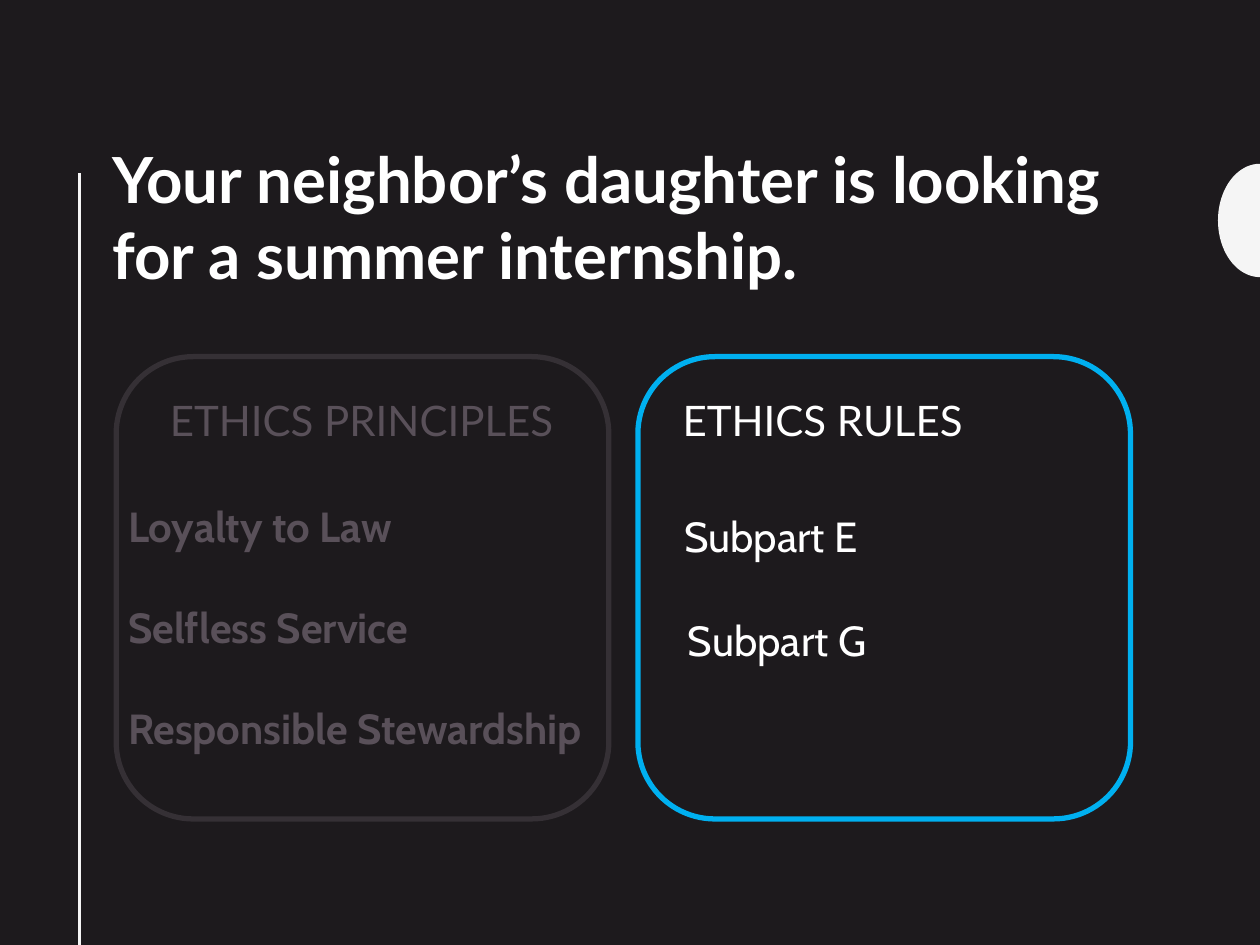
from math import cos, pi, sin

from lxml import etree
from pptx import Presentation
from pptx.dml.color import RGBColor
from pptx.enum import shapes, text
from pptx.oxml.ns import qn
from pptx.util import Pt

DARK = RGBColor(0x1D, 0x1A, 0x1D)
PALE = RGBColor(0xF5, 0xF5, 0xF5)
WHITE = RGBColor(0xFF, 0xFF, 0xFF)
DIM = RGBColor(0x59, 0x50, 0x59)
GRAY = RGBColor(0x35, 0x30, 0x35)
BLUE = RGBColor(0x00, 0xB0, 0xF0)


def place(item, left, top, width, height):
    item.left, item.top = Pt(left), Pt(top)
    item.width, item.height = Pt(width), Pt(height)


def style(para, face, size, color, bold=False):
    para.alignment = text.PP_ALIGN.LEFT
    font = para.font
    font.name, font.size, font.bold = face, Pt(size), bold
    font.color.rgb = color


deck = Presentation()
deck.slide_width, deck.slide_height = Pt(720), Pt(540)
slide = deck.slides.add_slide(deck.slide_layouts[1])
slide.background.fill.solid()
slide.background.fill.fore_color.rgb = DARK

arc = [(720 - 24 * sin(pi * i / 40), 126 - 32.4 * cos(pi * i / 40)) for i in range(41)]
path = slide.shapes.build_freeform(Pt(arc[0][0]), Pt(arc[0][1]))
path.add_line_segments([(Pt(x), Pt(y)) for x, y in arc[1:]], close=True)
disc = path.convert_to_shape()
disc.shadow.inherit = False
disc.fill.solid()
disc.fill.fore_color.rgb = PALE
disc.line.fill.background()

rule = slide.shapes.add_connector(
    shapes.MSO_CONNECTOR.STRAIGHT, Pt(45.5), Pt(99), Pt(45.5), Pt(540))
rule.line.color.rgb = PALE
rule.line.width = Pt(2)
etree.SubElement(rule._element.spPr, qn("a:effectLst"))

title = slide.shapes.title
place(title, 57, 76.3, 615, 116.6)
frame = title.text_frame
frame.text = "Your neighbor’s daughter is looking for a summer internship."
frame.vertical_anchor = text.MSO_ANCHOR.TOP
frame.auto_size = text.MSO_AUTO_SIZE.NONE
style(frame.paragraphs[0], "Lato", 36.3, WHITE, True)

for left, color in [(66.4, GRAY), (364.5, BLUE)]:
    card = slide.shapes.add_shape(
        shapes.MSO_SHAPE.ROUNDED_RECTANGLE, Pt(left), Pt(203.8), Pt(281.5), Pt(264.2))
    card.shadow.inherit = False
    card.fill.background()
    card.line.color.rgb = color
    card.line.width = Pt(3)

body = slide.placeholders[1]
place(body, 66, 282.2, 276.5, 152.6)
frame = body.text_frame
frame.text = "Loyalty to Law\nSelfless Service\nResponsible Stewardship"
frame.word_wrap = False
frame.auto_size = text.MSO_AUTO_SIZE.NONE
for i, para in enumerate(frame.paragraphs):
    para.space_before = Pt(29 if i else 0)
    props = para._p.get_or_add_pPr()
    props.set("marL", "0")
    props.set("indent", "0")
    etree.SubElement(props, qn("a:buNone"))
    style(para, "Cabin", 24, DIM, True)

labels = [
    ("ETHICS PRINCIPLES", 90, 221.8, 260, "Lato", DIM),
    ("ETHICS RULES", 383, 221.8, 260, "Lato", WHITE),
    ("Subpart E", 383.8, 288, 300, "Cabin", WHITE),
    ("Subpart G", 386, 347.8, 300, "Cabin", WHITE),
]
for words, left, top, width, face, color in labels:
    box = slide.shapes.add_textbox(Pt(left), Pt(top), Pt(width), Pt(36.4))
    box.text_frame.word_wrap = True
    box.text_frame.text = words
    style(box.text_frame.paragraphs[0], face, 24, color)

deck.save("out.pptx")
